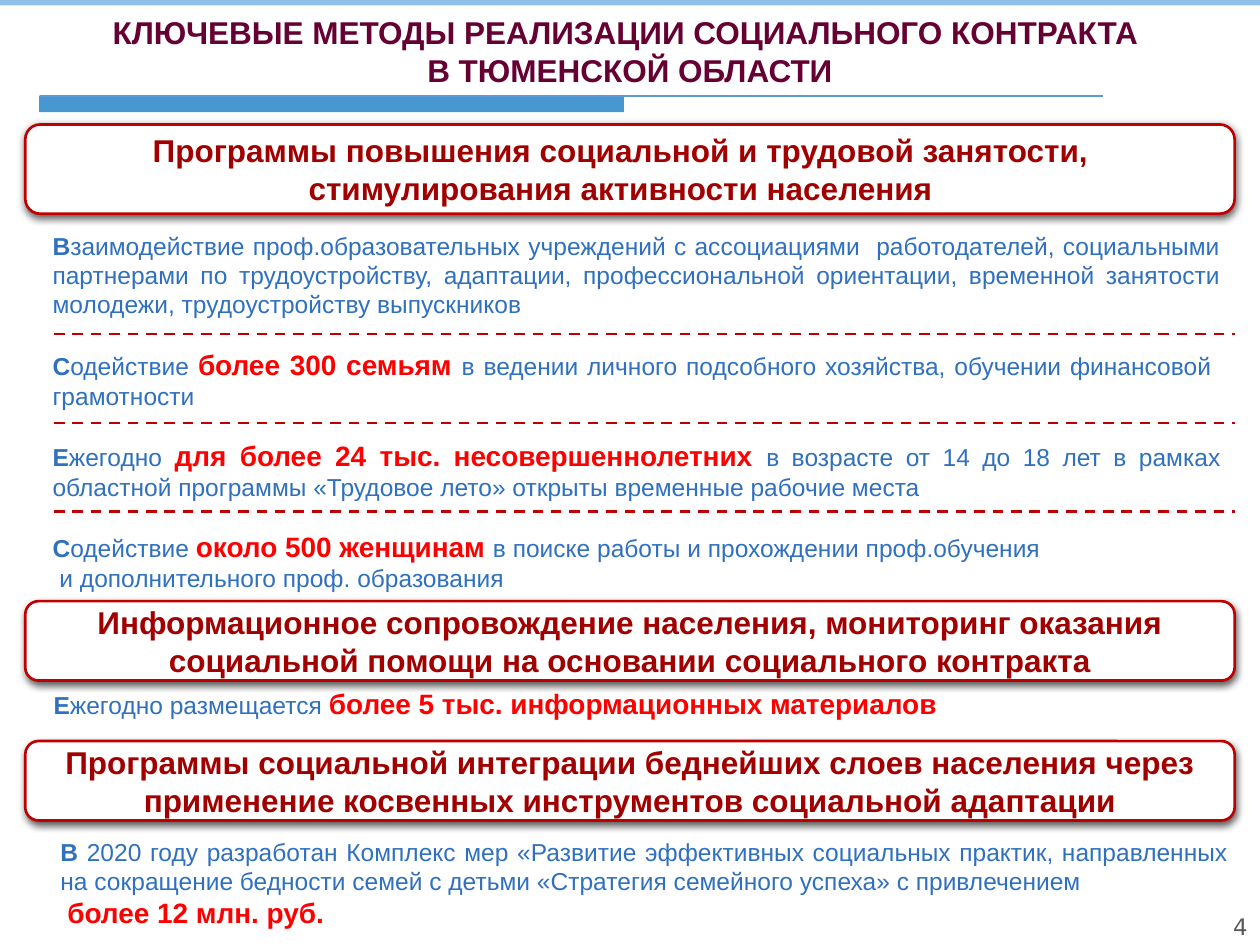
from lxml import etree
from pptx import Presentation
from pptx import util as u
from pptx.dml import color
from pptx.enum import dml, shapes, text
from pptx.oxml import ns

# Content: run styles are (size, colour, bold, font)
STYLES = {
    "title": (18, "660033", True, "Arial"),
    "head": (18, "A20000", True, "Arial"),
    "cap": (14, "2F70BF", True, "Arial"),
    "body": (14, "2F70BF", False, "Arial"),
    "key": (16, "FF0000", True, "Arial"),
    "page": (13, "595959", False, "DejaVu Sans"),
}
ALIGN = {"l": text.PP_ALIGN.LEFT, "c": text.PP_ALIGN.CENTER,
         "r": text.PP_ALIGN.RIGHT, "j": text.PP_ALIGN.JUSTIFY}
GAP = 16.1  # space before each new topic, points

TITLE = ["КЛЮЧЕВЫЕ МЕТОДЫ РЕАЛИЗАЦИИ СОЦИАЛЬНОГО КОНТРАКТА ",
         "В ТЮМЕНСКОЙ ОБЛАСТИ"]

# Heading panels: top, height, right inset, lines
HEADS = [
    (2.51, 1.8, 0.63, ["Программы повышения социальной и трудовой занятости,",
                       "стимулирования активности населения"]),
    (12.12, 1.6, 0.25, ["Информационное сопровождение населения, мониторинг оказания "
                        "социальной помощи на основании социального контракта"]),
    (14.94, 1.6, 0.25, ["Программы социальной интеграции беднейших слоев населения через "
                        "применение косвенных инструментов социальной адаптации"]),
]

# Body notes: left, top, height, paragraphs (align, space before, indent, runs)
NOTES = [
    (0.81, 4.52, 7.6, [
        ("j", 0, 0, [("cap", "В"), ("body", "заимодействие проф.образовательных учреждений с "
                     "ассоциациями  работодателей, социальными партнерами по трудоустройству, "
                     "адаптации, профессиональной ориентации, временной занятости молодежи, "
                     "трудоустройству выпускников")]),
        ("j", GAP, 0, [("cap", "С"), ("body", "одействие "), ("key", "более 300 семьям "),
                       ("body", "в ведении личного подсобного хозяйства, обучении "
                        "финансовой  грамотности")]),
        ("j", GAP, 0, [("cap", "Е"), ("body", "жегодно "),
                       ("key", "для более 24 тыс. несовершеннолетних "),
                       ("body", "в возрасте от 14 до 18 лет в рамках областной программы "
                        "«Трудовое лето» открыты временные рабочие места")]),
        ("l", GAP, 0, [("cap", "С"), ("body", "одействие "), ("key", "около 500 женщинам "),
                       ("body", "в поиске работы и прохождении проф.обучения")]),
        ("l", 0, 0.14, [("body", "и дополнительного проф. образования")]),
    ]),
    (0.83, 13.72, 0.93, [
        ("j", 0, 0, [("cap", "Е"), ("body", "жегодно размещается "),
                     ("key", "более 5 тыс. информационных материалов")]),
    ]),
    (0.97, 16.74, 2.1, [
        ("j", 0, 0, [("cap", "В "), ("body", "2020 году разработан Комплекс мер «Развитие "
                     "эффективных социальных практик, направленных на сокращение бедности семей "
                     "с детьми «Стратегия семейного успеха» с привлечением")]),
        ("l", 0, 0.14, [("key", "более 12 млн. руб.")]),
    ]),
]

RULES = [6.73, 8.53, 10.31]  # tops of the dashed rules

deck = Presentation()
deck.slide_width, deck.slide_height = u.Cm(25.4), u.Cm(19.05)
slide = deck.slides.add_slide(deck.slide_layouts[6])


def rgb(code):
    return color.RGBColor.from_string(code)


def node(root, tag, **attrs):
    return etree.SubElement(root, ns.qn(tag), attrs)


def write(frame, paras, right=0.25):
    frame.word_wrap = True
    frame.margin_left, frame.margin_right = u.Cm(0.25), u.Cm(right)
    frame.margin_top = frame.margin_bottom = u.Cm(0.13)
    for i, (align, gap, dent, runs) in enumerate(paras):
        para = frame.add_paragraph() if i else frame.paragraphs[0]
        para.alignment = ALIGN[align]
        para.space_before = u.Pt(gap)
        if dent:
            para._p.get_or_add_pPr().set("marL", str(u.Cm(dent)))
        for style, words in runs:
            run = para.add_run()
            run.text = words
            font = run.font
            size, code, font.bold, font.name = STYLES[style]
            font.size, font.color.rgb = u.Pt(size), rgb(code)


def lines(style, rows):
    return [("c", 0, 0, [(style, row)]) for row in rows]


def label(left, top, wide, high, paras):
    box = slide.shapes.add_textbox(u.Cm(left), u.Cm(top), u.Cm(wide), u.Cm(high))
    write(box.text_frame, paras)


def block(kind, left, top, wide, high, fill):
    part = slide.shapes.add_shape(kind, u.Cm(left), u.Cm(top), u.Cm(wide), u.Cm(high))
    part.shadow.inherit = False
    part.fill.solid()
    part.fill.fore_color.rgb = rgb(fill)
    part.line.fill.background()
    return part


def rule(left, right, top, code, width, dash=None):
    link = slide.shapes.add_connector(shapes.MSO_CONNECTOR.STRAIGHT,
                                      u.Cm(left), u.Cm(top), u.Cm(right), u.Cm(top))
    link.line.color.rgb, link.line.width = rgb(code), u.Pt(width)
    if dash:
        link.line.dash_style = dash
    node(link._element.spPr, "a:effectLst")


def panel(top, high, right, rows):
    part = block(shapes.MSO_SHAPE.ROUNDED_RECTANGLE, 0.51, top, 24.38, high, "FFFFFF")
    part.line.color.rgb, part.line.width = rgb("C00000"), u.Pt(1.5)
    glow = node(part._element.spPr.find(ns.qn("a:effectLst")), "a:outerShdw",
                blurRad=str(u.Pt(4.5)), dist=str(u.Pt(1.5)), dir="5400000", rotWithShape="0")
    node(node(glow, "a:srgbClr", val="000000"), "a:alpha", val="63000")
    part.text_frame.vertical_anchor = text.MSO_ANCHOR.MIDDLE
    write(part.text_frame, lines("head", rows), right)


# Top strip, title and its underline
block(shapes.MSO_SHAPE.RECTANGLE, 0, 0, 25.4, 0.11, "8EC0EA")
bar = block(shapes.MSO_SHAPE.RECTANGLE, 0.79, 1.93, 11.79, 0.33, "0070C0")
node(bar.fill._xPr.find(ns.qn("a:solidFill"))[0], "a:alpha", val="72000")
rule(0.81, 22.23, 1.93, "5B9BD5", 1)
label(0, 0.13, 25.4, 1.65, lines("title", TITLE))

# Panels, notes and dashed rules
for head in HEADS:
    panel(*head)
for left, top, high, paras in NOTES:
    label(left, top, 24.05, high, paras)
for top in RULES:
    rule(1.09, 24.89, top, "C00000", 1.5, dml.MSO_LINE.DASH)

# Page number
label(23.6, 18.27, 1.8, 0.76, [("r", 0, 0, [("page", "4")])])

deck.save("out.pptx")
